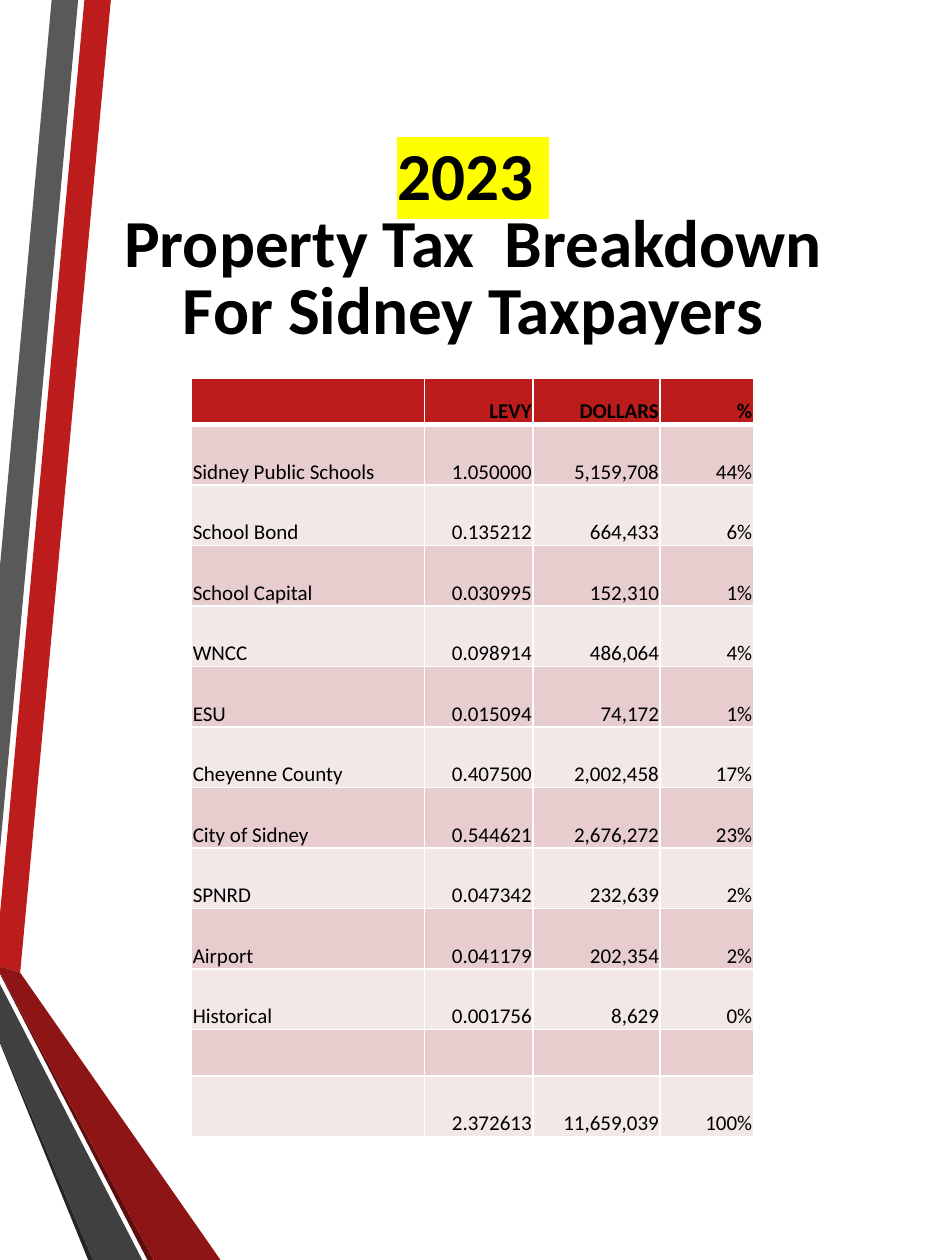
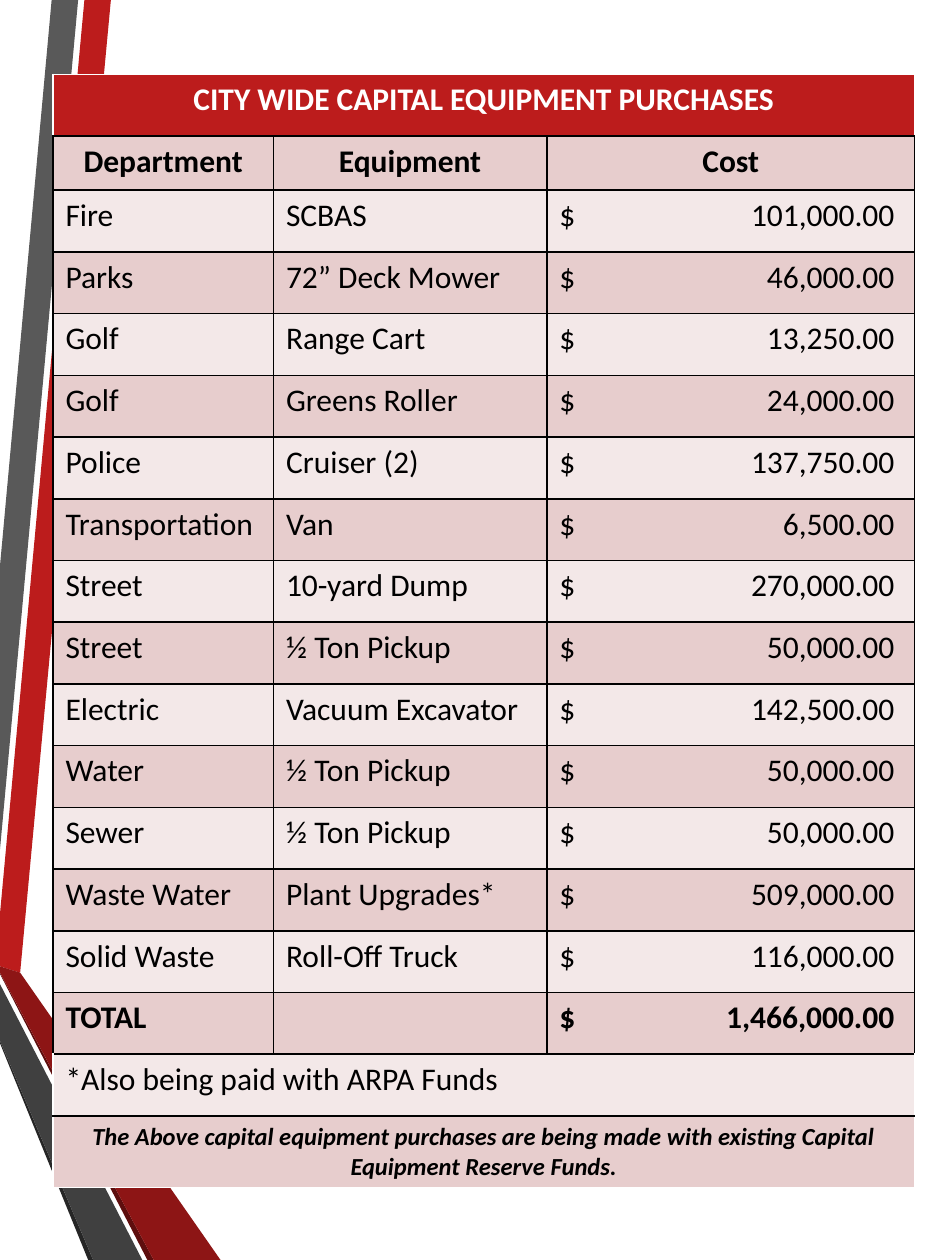
from dataclasses import dataclass

from lxml import etree
from pptx import Presentation
from pptx.dml.color import RGBColor
from pptx.enum.text import MSO_ANCHOR, PP_ALIGN
from pptx.oxml.ns import qn
from pptx.util import Inches, Pt

LEFT, MID, RIGHT = PP_ALIGN.LEFT, PP_ALIGN.CENTER, PP_ALIGN.RIGHT
TOP, CENTER, BOTTOM = MSO_ANCHOR.TOP, MSO_ANCHOR.MIDDLE, MSO_ANCHOR.BOTTOM

FONT = "Calibri"
BLACK, WHITE, YELLOW = "000000", "FFFFFF", "FFFF00"
RED, ROSE, PALE = "BC1C1C", "E7CDCD", "F3E8E8"


@dataclass(frozen=True)
class Band:
    color: str
    points: tuple


@dataclass(frozen=True)
class Grid:
    left: float
    top: float
    cols: tuple
    rows: tuple
    insets: tuple  # left, top, right, bottom
    anchor: MSO_ANCHOR
    line: str


# Ribbons down the left edge of every slide
BANDS = (
    Band(RED, ((0, 7.25), (0, 7.67), (0.16, 7.72), (0.88, 0), (0.67, 0))),
    Band("595959", ((0.62, 0), (0.41, 0), (0, 4.49), (0, 6.74))),
    Band("262626", ((0, 8.26), (0, 8.28), (0.7, 10), (0.74, 10))),
    Band("5E0E0E", ((0, 7.72), (0, 7.73), (1.17, 10), (1.22, 10))),
    Band("8D1515", ((0, 7.72), (1.22, 10), (1.75, 10), (0.16, 7.72), (0, 7.67))),
    Band("404040", ((0, 8.26), (0.74, 10), (1.13, 10), (0, 7.81))),
)

TITLE = ("2023 ", "Property Tax  Breakdown", "For Sidney Taxpayers")

TAXES = (
    ("", "LEVY", "DOLLARS", "%"),
    ("Sidney Public Schools", "1.050000", "5,159,708", "44%"),
    ("School Bond", "0.135212", "664,433", "6%"),
    ("School Capital", "0.030995", "152,310", "1%"),
    ("WNCC", "0.098914", "486,064", "4%"),
    ("ESU", "0.015094", "74,172", "1%"),
    ("Cheyenne County", "0.407500", "2,002,458", "17%"),
    ("City of Sidney", "0.544621", "2,676,272", "23%"),
    ("SPNRD", "0.047342", "232,639", "2%"),
    ("Airport", "0.041179", "202,354", "2%"),
    ("Historical", "0.001756", "8,629", "0%"),
    ("", "", "", ""),
    ("", "2.372613", "11,659,039", "100%"),
)
TAX_GRID = Grid(1.52, 3, (1.85, 0.86, 1.01, 0.74),
                (0.37,) + (0.48,) * 10 + (0.37, 0.48),
                (0.01, 0.01, 0.01, 0), BOTTOM, WHITE)

HEADING = "CITY WIDE CAPITAL EQUIPMENT PURCHASES"
HEADS = ("Department", "Equipment", "Cost")
ITEMS = (
    ("Fire", "SCBAS", "101,000.00"),
    ("Parks", "72” Deck Mower", "46,000.00"),
    ("Golf", "Range Cart", "13,250.00"),
    ("Golf", "Greens Roller", "24,000.00"),
    ("Police", "Cruiser (2)", "137,750.00"),
    ("Transportation", "Van", "6,500.00"),
    ("Street", "10-yard Dump", "270,000.00"),
    ("Street", "½ Ton Pickup", "50,000.00"),
    ("Electric", "Vacuum Excavator", "142,500.00"),
    ("Water", "½ Ton Pickup", "50,000.00"),
    ("Sewer", "½ Ton Pickup", "50,000.00"),
    ("Waste Water", "Plant Upgrades*", "509,000.00"),
    ("Solid Waste", "Roll-Off Truck", "116,000.00"),
    ("TOTAL", "", "1,466,000.00"),
)
NOTE = "*Also being paid with ARPA Funds"
SOURCE = ("The Above capital equipment purchases are being made with existing "
          "Capital Equipment Reserve Funds.")
COST_GRID = Grid(0.42, 0.59, (1.75, 2.17, 2.92), (0.49, 0.43) + (0.49,) * 16,
                 (0.1, 0.05, 0.1, 0.05), TOP, BLACK)
COST_TAB = 2.66


def rgb(color: str) -> RGBColor:
    return RGBColor.from_string(color)


def put(para, text: str, *, size: float, color: str = BLACK, bold: bool = False,
        italic: bool = False, align=LEFT, mark: str = "", tab: float = 0) -> None:
    """Write one formatted run; mark highlights it, tab sets a right tab stop."""
    para.alignment = align
    run = para.add_run()
    run.text = text
    font = run.font
    font.name, font.size, font.bold, font.italic = FONT, Pt(size), bold, italic
    font.color.rgb = rgb(color)
    if mark:
        light = etree.Element(qn("a:highlight"))
        etree.SubElement(light, qn("a:srgbClr"), val=mark)
        run._r.get_or_add_rPr().find(qn("a:solidFill")).addnext(light)
    if tab:
        stops = etree.SubElement(para._p.get_or_add_pPr(), qn("a:tabLst"))
        etree.SubElement(stops, qn("a:tab"), pos=str(Inches(tab)), algn="r")


def edge(cell, **sides: tuple) -> None:
    """Set cell borders; each of L, R, T, B is a (color, width) pair."""
    props = cell._tc.get_or_add_tcPr()
    for spot, side in enumerate("LRTB"):
        color, width = sides[side]
        line = etree.Element(qn(f"a:ln{side}"), w=str(Pt(width)))
        fill = etree.SubElement(line, qn("a:solidFill"))
        etree.SubElement(fill, qn("a:srgbClr"), val=color)
        props.insert(spot, line)


def add_grid(slide, grid: Grid, spans: tuple = ()):
    """Add a striped table; rows listed in spans become one wide cell."""
    count, wide = len(grid.rows), len(grid.cols)
    table = slide.shapes.add_table(
        count, wide, Inches(grid.left), Inches(grid.top),
        Inches(sum(grid.cols)), Inches(sum(grid.rows))).table
    table.first_row = table.horz_banding = False
    for col, width in zip(table.columns, grid.cols):
        col.width = Inches(width)
    for num, height in enumerate(grid.rows):
        table.rows[num].height = Inches(height)
        side = (WHITE if num in spans else grid.line, 1)
        roof = (WHITE if num == 0 else grid.line, 1)
        floor = (WHITE if num == count - 1 else grid.line, 1)
        if num < 2 and not spans:  # thick rule under the header
            roof, floor = ((WHITE, 1), (WHITE, 3)) if num == 0 else ((WHITE, 3), floor)
        for cell in table.rows[num].cells:
            cell.fill.solid()
            cell.fill.fore_color.rgb = rgb(RED if num == 0 else ROSE if num % 2 else PALE)
            cell.vertical_anchor = grid.anchor
            (cell.margin_left, cell.margin_top, cell.margin_right,
             cell.margin_bottom) = map(Inches, grid.insets)
            edge(cell, L=side, R=side, T=roof, B=floor)
        if num in spans:
            table.cell(num, 0).merge(table.cell(num, wide - 1))
    return table


def write(table, row: int, col: int, text: str, **form) -> None:
    if text:
        put(table.cell(row, col).text_frame.paragraphs[0], text, **form)


def add_bands(slide) -> None:
    for band in BANDS:
        first, *rest = [(Inches(x), Inches(y)) for x, y in band.points]
        path = slide.shapes.build_freeform(*first, scale=1.0)
        path.add_line_segments(rest, close=True)
        shape = path.convert_to_shape()
        shape.shadow.inherit = False
        shape.fill.solid()
        shape.fill.fore_color.rgb = rgb(band.color)
        shape.line.fill.background()


def new_slide(deck):
    slide = deck.slides.add_slide(deck.slide_layouts[6])
    add_bands(slide)
    return slide


def tax_slide(deck) -> None:
    slide = new_slide(deck)

    # Title, raised above the table by the bottom inset
    frame = slide.shapes.add_textbox(
        Inches(0.52), Inches(1.5), Inches(6.47), Inches(1.97)).text_frame
    frame.word_wrap = True
    frame.vertical_anchor = CENTER
    frame.margin_top, frame.margin_bottom = Inches(0), Inches(0.99)
    for num, text in enumerate(TITLE):
        para = frame.add_paragraph() if num else frame.paragraphs[0]
        para.line_spacing, para.space_after = 0.7, Pt(6)
        put(para, text, size=38.4, bold=True, align=MID, mark="" if num else YELLOW)

    # Levy table
    table = add_grid(slide, TAX_GRID)
    for row, texts in enumerate(TAXES):
        for col, text in enumerate(texts):
            write(table, row, col, text, size=12, bold=row == 0,
                  align=RIGHT if col else LEFT)


def cost_slide(deck) -> None:
    slide = new_slide(deck)
    last = len(COST_GRID.rows) - 1
    table = add_grid(slide, COST_GRID, spans=(0, last - 1, last))

    # Heading rows
    write(table, 0, 0, HEADING, size=18, color=WHITE, bold=True, align=MID)
    for col, text in enumerate(HEADS):
        write(table, 1, col, text, size=18, bold=True, align=MID)

    # Purchases and total
    for row, (unit, item, cost) in enumerate(ITEMS, start=2):
        bold = unit == "TOTAL"
        write(table, row, 0, unit, size=18, bold=bold)
        write(table, row, 1, item, size=18, bold=bold)
        write(table, row, 2, f"$\t{cost}", size=18, bold=bold, tab=COST_TAB)

    # Closing notes
    write(table, last - 1, 0, NOTE, size=18)
    write(table, last, 0, SOURCE, size=14, bold=True, italic=True, align=MID)


def main() -> None:
    deck = Presentation()
    deck.slide_width, deck.slide_height = Inches(7.5), Inches(10)
    tax_slide(deck)
    cost_slide(deck)
    deck.save("out.pptx")


if __name__ == "__main__":
    main()
